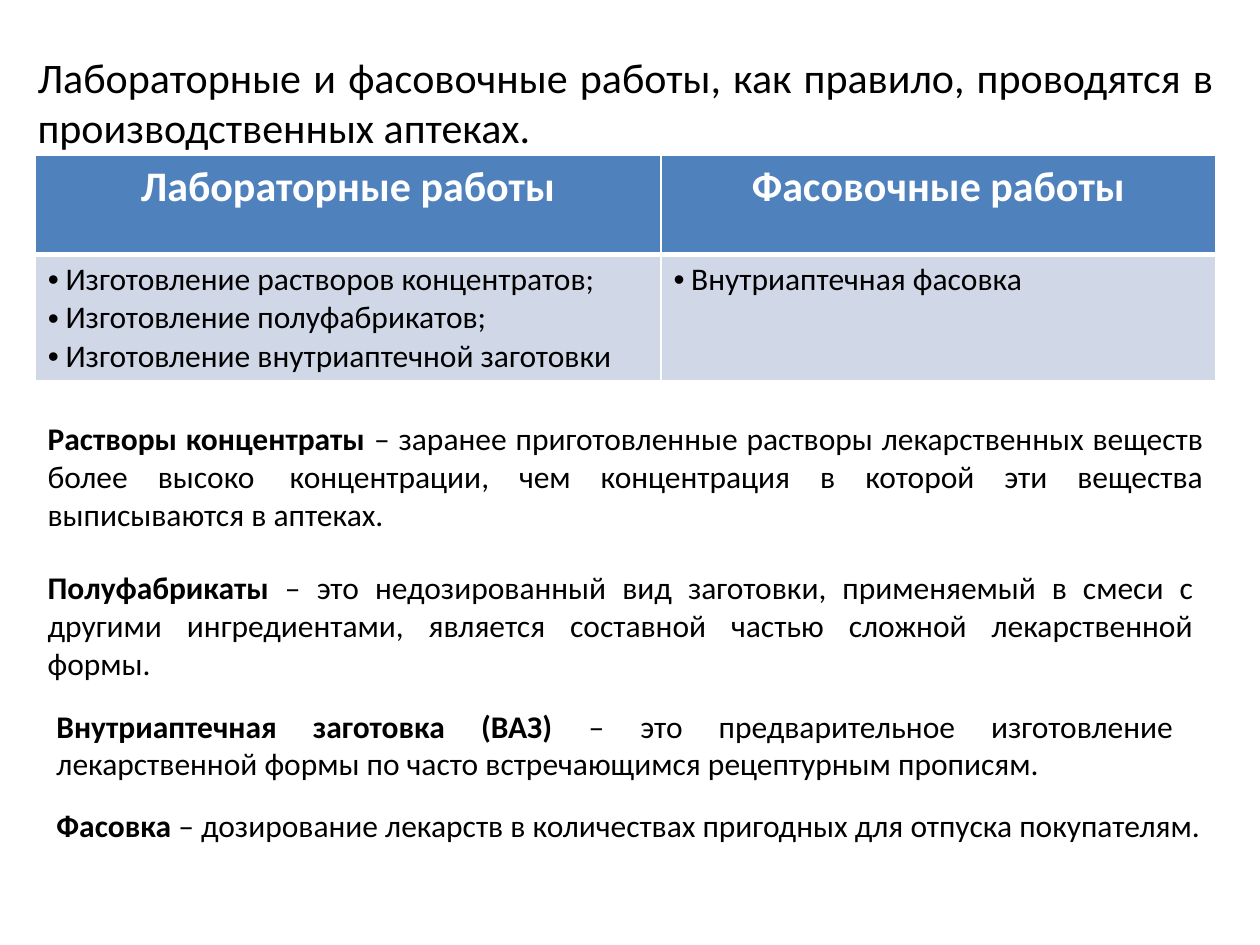
from dataclasses import dataclass

from lxml import etree
from pptx import Presentation
from pptx.dml.color import RGBColor
from pptx.enum.text import MSO_AUTO_SIZE, PP_ALIGN
from pptx.oxml.ns import qn
from pptx.util import Emu, Inches, Pt

LEFT, CENTER, JUSTIFY = PP_ALIGN.LEFT, PP_ALIGN.CENTER, PP_ALIGN.JUSTIFY
FIT_SHAPE = MSO_AUTO_SIZE.SHAPE_TO_FIT_TEXT

COLORS = {"text": "000000", "white": "FFFFFF", "header": "4F81BD", "body": "D0D8E8"}
FONT = "Calibri"
HEADING_SIZE, BODY_SIZE = 24, 18
SLIDE_W, SLIDE_H = Inches(10), Inches(7.5)
BULLET_INDENT = Inches(0.14)
BORDERS = ("lnL", "lnR", "lnT", "lnB")


@dataclass(frozen=True)
class Area:
    """Position and size as percentages of the slide."""
    left: float
    top: float
    width: float
    height: float

    def emu(self) -> tuple[Emu, Emu, Emu, Emu]:
        return (Emu(round(SLIDE_W * self.left / 100)), Emu(round(SLIDE_H * self.top / 100)),
                Emu(round(SLIDE_W * self.width / 100)), Emu(round(SLIDE_H * self.height / 100)))


@dataclass(frozen=True)
class Statement:
    area: Area
    term: str
    meaning: str
    size: int = BODY_SIZE
    align: PP_ALIGN = JUSTIFY


@dataclass(frozen=True)
class WorkKind:
    """One table column."""
    title: str
    tasks: tuple[str, ...]
    share: float


STATEMENTS = [
    Statement(Area(2, 4.8, 95.3, 12.13), "",
              "Лабораторные и фасовочные работы, как правило, проводятся в "
              "производственных аптеках.", HEADING_SIZE),
    Statement(Area(2.8, 43.73, 93.7, 13.47), "Растворы концентраты ",
              "– заранее приготовленные растворы лекарственных веществ более высоко\t "
              "концентрации, чем концентрация в которой эти вещества выписываются в аптеках."),
    Statement(Area(2.8, 59.47, 92.9, 13.47), "Полуфабрикаты",
              " – это недозированный вид заготовки, применяемый в смеси с другими "
              "ингредиентами, является составной частью сложной лекарственной формы."),
    Statement(Area(3.5, 74.13, 90.6, 9.47), "Внутриаптечная заготовка (ВАЗ) ",
              "– это предварительное изготовление лекарственной формы по часто "
              "встречающимся рецептурным прописям."),
    Statement(Area(3.5, 84.67, 93.7, 5.33), "Фасовка",
              " – дозирование лекарств в количествах пригодных для отпуска покупателям.",
              align=LEFT),
]

TABLE_AREA = Area(2.8, 16.4, 93.7, 23.87)
HEADER_SHARE = 0.44
WORK_KINDS = [
    WorkKind("Лабораторные работы",
             ("Изготовление растворов концентратов;", "Изготовление полуфабрикатов;",
              "Изготовление внутриаптечной заготовки"), 0.53),
    WorkKind("Фасовочные работы", ("Внутриаптечная фасовка",), 0.47),
]


def add_run(paragraph, text: str, size: int, color: str, bold: bool = False) -> None:
    run = paragraph.add_run()
    run.text = text
    run.font.name = FONT
    run.font.size = Pt(size)
    run.font.bold = bold
    run.font.color.rgb = RGBColor.from_string(COLORS[color])


def add_statement(slide, statement: Statement) -> None:
    frame = slide.shapes.add_textbox(*statement.area.emu()).text_frame
    frame.word_wrap = True
    frame.auto_size = FIT_SHAPE
    paragraph = frame.paragraphs[0]
    paragraph.alignment = statement.align
    if statement.term:
        add_run(paragraph, statement.term, statement.size, "text", bold=True)
    add_run(paragraph, statement.meaning, statement.size, "text")


def add_bullet(paragraph) -> None:
    properties = paragraph._p.get_or_add_pPr()
    properties.set("marL", str(BULLET_INDENT))
    properties.set("indent", str(-BULLET_INDENT))
    etree.SubElement(properties, qn("a:buFont"), typeface="Arial")
    etree.SubElement(properties, qn("a:buChar"), char="•")


def style_cell(cell, fill: str, thick_side: str) -> None:
    # Borders come before the fill in the cell properties
    properties = cell._tc.get_or_add_tcPr()
    for side in BORDERS:
        width = Pt(3 if side == thick_side else 1)
        line = etree.SubElement(properties, qn(f"a:{side}"), w=str(width))
        paint = etree.SubElement(line, qn("a:solidFill"))
        etree.SubElement(paint, qn("a:srgbClr"), val=COLORS["white"])
    cell.fill.solid()
    cell.fill.fore_color.rgb = RGBColor.from_string(COLORS[fill])


def add_work_table(slide, area: Area, kinds: list[WorkKind]) -> None:
    left, top, width, height = area.emu()
    table = slide.shapes.add_table(2, len(kinds), left, top, width, height).table
    table.rows[0].height = Emu(round(height * HEADER_SHARE))
    table.rows[1].height = height - table.rows[0].height
    for column, kind in enumerate(kinds):
        table.columns[column].width = Emu(round(width * kind.share))
        title_cell, tasks_cell = table.cell(0, column), table.cell(1, column)

        style_cell(title_cell, "header", "lnB")
        title = title_cell.text_frame.paragraphs[0]
        title.alignment = CENTER
        add_run(title, kind.title, HEADING_SIZE, "white", bold=True)

        style_cell(tasks_cell, "body", "lnT")
        frame = tasks_cell.text_frame
        for index, task in enumerate(kind.tasks):
            paragraph = frame.add_paragraph() if index else frame.paragraphs[0]
            add_bullet(paragraph)
            add_run(paragraph, task, BODY_SIZE, "text")


def main() -> None:
    presentation = Presentation()
    presentation.slide_width, presentation.slide_height = SLIDE_W, SLIDE_H
    slide = presentation.slides.add_slide(presentation.slide_layouts[6])

    # Introduction, table of work kinds, then definitions
    introduction, *definitions = STATEMENTS
    add_statement(slide, introduction)
    add_work_table(slide, TABLE_AREA, WORK_KINDS)
    for definition in definitions:
        add_statement(slide, definition)

    presentation.save("out.pptx")


if __name__ == "__main__":
    main()
